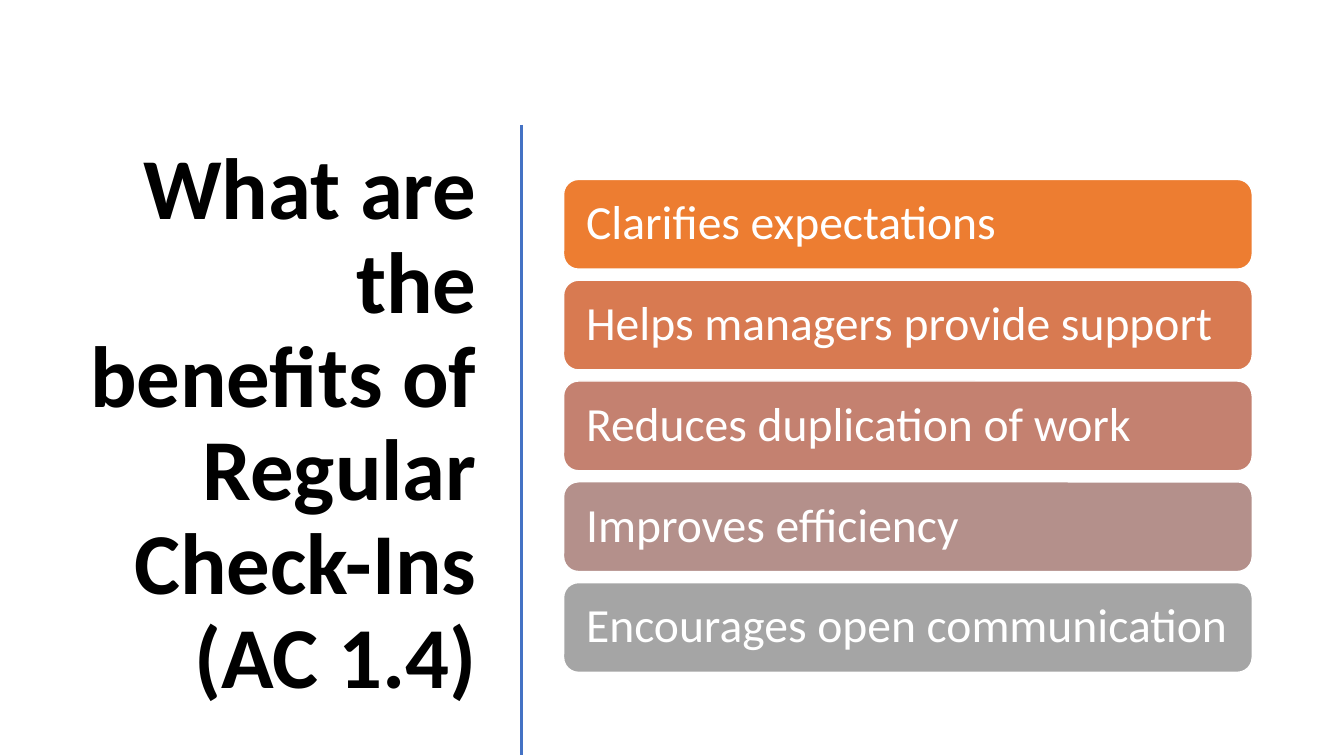
import pptx
import pptx.util
import pptx.dml.color
import pptx.enum.shapes
import pptx.enum.text
from dataclasses import dataclass
from lxml import etree

Inches = pptx.util.Inches
Pt = pptx.util.Pt
Align = pptx.enum.text.PP_ALIGN

HEADING = "What are the benefits of Regular Check-Ins (AC 1.4)"
BENEFITS = [
    ("Clarifies expectations", "ED7D31"),
    ("Helps managers provide support", "D87A51"),
    ("Reduces duplication of work", "C48170"),
    ("Improves efficiency", "B4908B"),
    ("Encourages open communication", "A5A5A5"),
]


@dataclass(frozen=True)
class Theme:
    font: str = "Calibri"
    heading_size: int = 62
    benefit_size: int = 34
    heading_color: str = "000000"
    benefit_color: str = "FFFFFF"
    divider_color: str = "4472C4"


THEME = Theme()
BENEFIT_LEFT, BENEFIT_TOP = 5.59, 1.78
BENEFIT_WIDTH, BENEFIT_HEIGHT = 6.83, 0.89
BENEFIT_PITCH = 1.0
BENEFIT_INSET = 0.18


def rgb(value):
    return pptx.dml.color.RGBColor.from_string(value)


def write(frame, words, size, color, align, bold=False):
    frame.word_wrap = True
    frame.auto_size = pptx.enum.text.MSO_AUTO_SIZE.NONE
    frame.vertical_anchor = pptx.enum.text.MSO_ANCHOR.MIDDLE
    paragraph = frame.paragraphs[0]
    paragraph.alignment = align
    paragraph.line_spacing = 0.9
    paragraph.space_before = Pt(0)
    run = paragraph.add_run()
    run.text = words
    run.font.name = THEME.font
    run.font.size = Pt(size)
    run.font.bold = bold
    run.font.color.rgb = rgb(color)


def add_heading(slide):
    heading = slide.shapes.title
    heading.left, heading.top = Inches(0.52), Inches(1.17)
    heading.width, heading.height = Inches(4.31), Inches(6.11)
    write(heading.text_frame, HEADING, THEME.heading_size,
          THEME.heading_color, Align.RIGHT, bold=True)


def add_divider(slide):
    divider = slide.shapes.add_connector(
        pptx.enum.shapes.MSO_CONNECTOR.STRAIGHT,
        Inches(5.17), Inches(1.24), Inches(5.17), Inches(7.49))
    divider.line.color.rgb = rgb(THEME.divider_color)
    divider.line.width = Pt(2)
    etree.SubElement(divider.line._get_or_add_ln().getparent(),
                     pptx.oxml.ns.qn("a:effectLst"))


def add_benefit(slide, position, words, color):
    benefit = slide.shapes.add_shape(
        pptx.enum.shapes.MSO_SHAPE.ROUNDED_RECTANGLE,
        Inches(BENEFIT_LEFT), Inches(BENEFIT_TOP + position * BENEFIT_PITCH),
        Inches(BENEFIT_WIDTH), Inches(BENEFIT_HEIGHT))
    benefit.shadow.inherit = False
    benefit.fill.solid()
    benefit.fill.fore_color.rgb = rgb(color)
    benefit.line.color.rgb = rgb(THEME.benefit_color)
    benefit.line.width = Pt(1)
    frame = benefit.text_frame
    frame.margin_left = frame.margin_right = Inches(BENEFIT_INSET)
    write(frame, words, THEME.benefit_size, THEME.benefit_color, Align.LEFT)


def main():
    deck = pptx.Presentation()
    deck.slide_width, deck.slide_height = Inches(13.33), Inches(7.5)
    slide = deck.slides.add_slide(deck.slide_layouts[5])
    add_heading(slide)
    add_divider(slide)
    for position, (words, color) in enumerate(BENEFITS):
        add_benefit(slide, position, words, color)
    deck.save("out.pptx")


if __name__ == "__main__":
    main()
